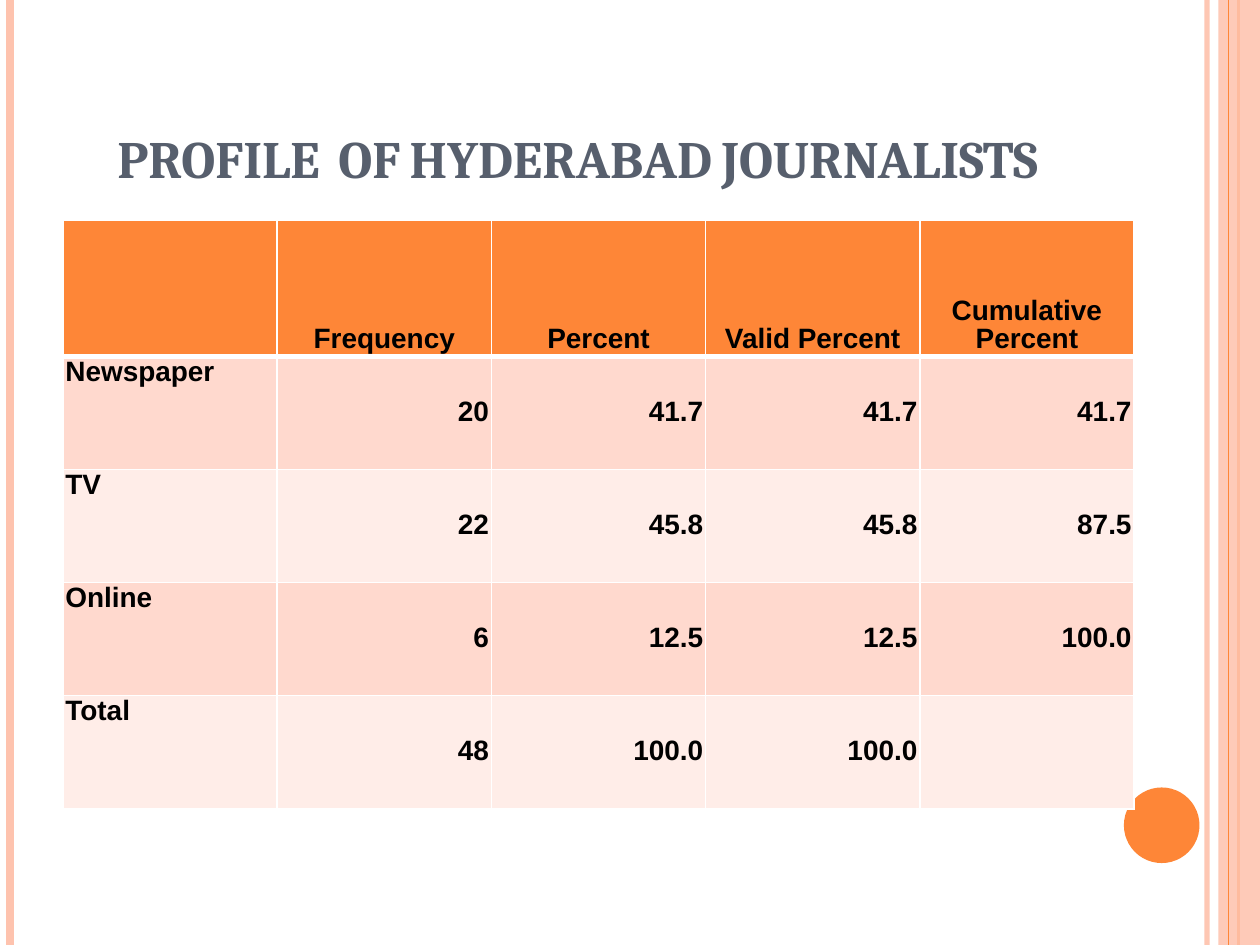
from dataclasses import dataclass

from lxml.etree import SubElement as Sub
from pptx import Presentation as Deck
from pptx.dml.color import RGBColor as Rgb
from pptx.enum.shapes import MSO_CONNECTOR as Link, MSO_SHAPE as Form
from pptx.enum.text import MSO_ANCHOR as Anchor, PP_ALIGN as Align
from pptx.oxml.ns import qn
from pptx.util import Inches, Pt


@dataclass(frozen=True)
class Theme:
    rose: str = "FEC3AE"
    orange: str = "FE8637"
    slate: str = "575F6D"
    black: str = "000000"
    white: str = "FFFFFF"
    bands: tuple = ("FFD9CE", "FFEDE8")
    serif: str = "Cambria"
    sans: str = "Arial"
    title: int = 30
    body: int = 16


def write(frame, text, *, size, font, color, align=Align.LEFT, lead=None, caps=False):
    para = frame.paragraphs[0]
    para.alignment = align
    if lead:
        para.line_spacing = Pt(lead)
    run = para.add_run()
    run.text = text
    run.font.size = Pt(size)
    run.font.name = font
    run.font.bold = True
    run.font.color.rgb = Rgb.from_string(color)
    if caps:
        run.font._element.set("cap", "small")


def paint(fill, color, alpha=100):
    fill.solid()
    fill.fore_color.rgb = Rgb.from_string(color)
    if alpha < 100:
        tone = fill._xPr.find(qn("a:solidFill"))[0]
        Sub(tone, qn("a:alpha"), val=str(alpha * 1000))


def edge(cell, side, color, width):
    props = cell._tc.get_or_add_tcPr()
    line = Sub(props, qn(f"a:ln{side}"), w=str(Pt(width)))
    Sub(Sub(line, qn("a:solidFill")), qn("a:srgbClr"), val=color)


class Page:
    def __init__(self, slide, theme):
        self.slide = slide
        self.theme = theme

    def stripe(self, left, color, width, alpha=100):
        x = Inches(left)
        line = self.slide.shapes.add_connector(Link.STRAIGHT, x, 0, x, Inches(7.5))
        line.line.width = Pt(width)
        paint(line.line.fill, color, alpha)
        Sub(line._element.spPr, qn("a:effectLst"))

    def shape(self, form, box, color, alpha=100):
        item = self.slide.shapes.add_shape(form, *map(Inches, box))
        item.shadow.inherit = False
        item.line.fill.background()
        paint(item.fill, color, alpha)

    def title(self, text, box):
        style = self.theme
        frame = self.slide.shapes.add_textbox(*map(Inches, box)).text_frame
        frame.word_wrap = True
        frame.vertical_anchor = Anchor.BOTTOM
        write(frame, text, size=style.title, font=style.serif,
              color=style.slate, align=Align.CENTER, caps=True)

    def table(self, rows, box, head):
        left, top, width, height = map(Inches, box)
        grid = self.slide.shapes.add_table(
            len(rows), len(rows[0]), left, top, width, height).table
        grid.rows[0].height = Inches(head)
        rest = (box[3] - head) / (len(rows) - 1)
        for row in list(grid.rows)[1:]:
            row.height = Inches(rest)
        for r, row in enumerate(rows):
            for c, text in enumerate(row):
                self.cell(grid.cell(r, c), text, r, c)

    def cell(self, cell, text, r, c):
        style = self.theme
        cell.margin_left = cell.margin_right = Inches(0.02)
        cell.margin_top = cell.margin_bottom = Inches(0.02)
        widths = {"L": 1, "R": 1, "T": 3 if r == 1 else 1, "B": 3 if r == 0 else 1}
        for side, width in widths.items():
            edge(cell, side, style.white, width)
        if r == 0:
            color, anchor, align = style.orange, Anchor.BOTTOM, Align.CENTER
        else:
            color = style.bands[(r - 1) % 2]
            anchor, align = ((Anchor.MIDDLE, Align.RIGHT) if c
                             else (Anchor.TOP, Align.LEFT))
        paint(cell.fill, color)
        cell.vertical_anchor = anchor
        if text:
            write(cell.text_frame, text, size=style.body, font=style.sans,
                  color=style.black, align=align, lead=style.body)


ROWS = [
    ("", "Frequency", "Percent", "Valid Percent", "Cumulative Percent"),
    ("Newspaper", "20", "41.7", "41.7", "41.7"),
    ("TV", "22", "45.8", "45.8", "87.5"),
    ("Online", "6", "12.5", "12.5", "100.0"),
    ("Total", "48", "100.0", "100.0", ""),
]


def main():
    deck = Deck()
    deck.slide_width, deck.slide_height = Inches(10), Inches(7.5)
    theme = Theme()
    page = Page(deck.slides.add_slide(deck.slide_layouts[6]), theme)
    page.stripe(9.58, theme.rose, 3, alpha=93)
    page.stripe(0.08, theme.rose, 4.5)
    page.stripe(9.83, theme.orange, 1.5)
    page.shape(Form.RECTANGLE, (9.67, 0, 0.33, 7.5), theme.rose, alpha=87)
    page.stripe(9.75, theme.orange, 0.75)
    page.shape(Form.OVAL, (8.92, 6.25, 0.6, 0.6), theme.orange)
    page.title("PROFILE  OF HYDERABAD JOURNALISTS", (0.5, 0.3, 8.17, 1.25))
    page.table(ROWS, (0.5, 1.75, 8.5, 4.67), head=1.08)
    deck.save("out.pptx")


if __name__ == "__main__":
    main()
